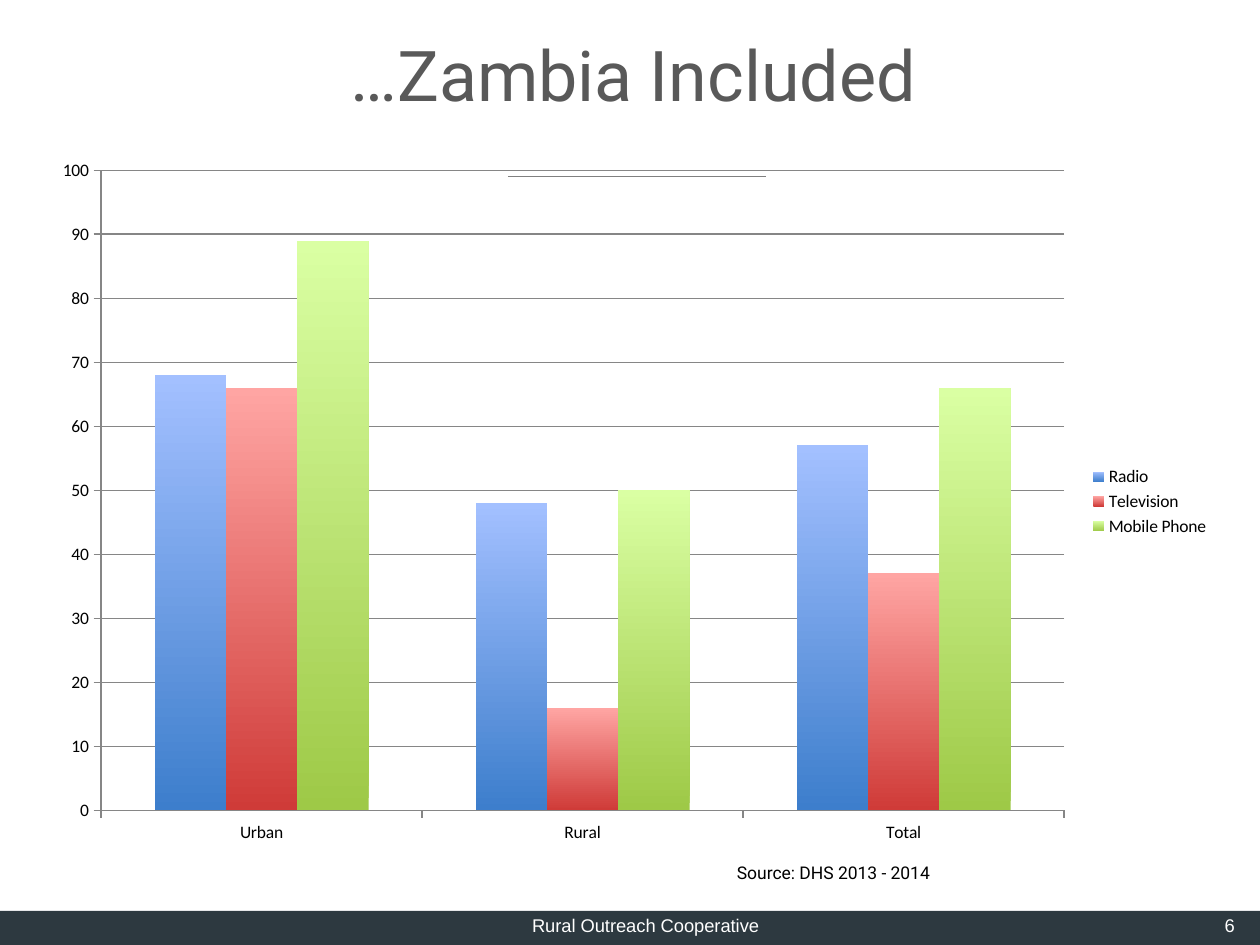
from lxml import etree
from pptx import Presentation
from pptx.chart.data import CategoryChartData
from pptx.dml.color import RGBColor
from pptx.enum.chart import XL_CHART_TYPE, XL_LEGEND_POSITION, XL_TICK_MARK
from pptx.enum.shapes import MSO_CONNECTOR, MSO_SHAPE
from pptx.enum.text import MSO_ANCHOR, PP_ALIGN
from pptx.oxml.ns import qn
from pptx.util import Inches, Pt

WHITE = RGBColor(0xFF, 0xFF, 0xFF)
BLACK = RGBColor(0x00, 0x00, 0x00)
SLATE = RGBColor(0x2D, 0x39, 0x40)
TITLE_GRAY = RGBColor(0x59, 0x59, 0x59)
RULE_GRAY = RGBColor(0x80, 0x80, 0x80)
AXIS_GRAY = RGBColor(0x86, 0x86, 0x86)
BLUE_DARK, BLUE_LIGHT = RGBColor(0x3D, 0x7E, 0xCC), RGBColor(0xA3, 0xC0, 0xFF)
RED_DARK, RED_LIGHT = RGBColor(0xCF, 0x3B, 0x38), RGBColor(0xFF, 0xA5, 0xA3)
GREEN_DARK, GREEN_LIGHT = RGBColor(0x9E, 0xC9, 0x47), RGBColor(0xDA, 0xFF, 0xA3)

CATEGORIES = ("Urban", "Rural", "Total")
SERIES = (
    ("Radio", (68, 48, 57), BLUE_DARK, BLUE_LIGHT),
    ("Television", (66, 16, 37), RED_DARK, RED_LIGHT),
    ("Mobile Phone", (89, 50, 66), GREEN_DARK, GREEN_LIGHT),
)


def style_font(font, name, size, color):
    for key, value in {"name": name, "size": Pt(size), "bold": False}.items():
        setattr(font, key, value)
    font.color.rgb = color


def fill_text(shape, text, align, side_margin, name, size, color):
    frame = shape.text_frame
    settings = {
        "word_wrap": True,
        "vertical_anchor": MSO_ANCHOR.TOP,
        "margin_left": side_margin,
        "margin_right": side_margin,
        "margin_top": Inches(0.05),
        "margin_bottom": Inches(0.05),
    }
    for key, value in settings.items():
        setattr(frame, key, value)
    para = frame.paragraphs[0]
    para.alignment = align
    span = para.add_run()
    span.text = text
    style_font(span.font, name, size, color)


def add_title(page, left, top, width, height):
    title = page.shapes.title
    box = {"left": left, "top": top, "width": width, "height": height}
    for key, value in box.items():
        setattr(title, key, value)
    fill_text(title, "…Zambia Included", PP_ALIGN.CENTER, Inches(0.1),
              "Roboto", 40, TITLE_GRAY)


def add_rule(page, left, top, width):
    rule = page.shapes.add_connector(
        MSO_CONNECTOR.STRAIGHT, left, top, left + width, top)
    rule.line.color.rgb = RULE_GRAY
    rule.line.width = Pt(0.75)
    etree.SubElement(rule._element.spPr, qn("a:effectLst"))


def add_source(page, left, top, width, height):
    box = page.shapes.add_textbox(left, top, width, height)
    fill_text(box, "Source: DHS 2013 - 2014", PP_ALIGN.LEFT, Inches(0.1),
              "Roboto", 10, BLACK)


def add_media_chart(page, left, top, width, height):
    data = CategoryChartData()
    data.categories = CATEGORIES
    for name, values, _, _ in SERIES:
        data.add_series(name, values)
    chart = page.shapes.add_chart(
        XL_CHART_TYPE.COLUMN_CLUSTERED, left, top, width, height, data).chart
    style_font(chart.font, "Calibri", 10, BLACK)
    chart.has_title = False
    chart.has_legend = True
    chart.legend.position = XL_LEGEND_POSITION.RIGHT
    chart.legend.include_in_layout = False

    plot = chart.plots[0]
    for key, value in {"gap_width": 150, "overlap": 0,
                       "vary_by_categories": False}.items():
        setattr(plot, key, value)
    for series, (_, _, dark, light) in zip(plot.series, SERIES):
        fill = series.format.fill
        fill.gradient()
        fill.gradient_angle = 90
        for stop, color in zip(fill.gradient_stops, (dark, light)):
            stop.color.rgb = color

    value_axis = chart.value_axis
    for key, value in {"minimum_scale": 0, "maximum_scale": 100,
                       "major_unit": 10, "has_major_gridlines": True}.items():
        setattr(value_axis, key, value)
    for axis in (chart.category_axis, value_axis):
        axis.major_tick_mark = XL_TICK_MARK.OUTSIDE
        axis.minor_tick_mark = XL_TICK_MARK.NONE
    for part in (chart.category_axis, value_axis, value_axis.major_gridlines):
        part.format.line.color.rgb = AXIS_GRAY
        part.format.line.width = Pt(0.75)


def add_footer(page, left, top, width, height):
    bar = page.shapes.add_shape(MSO_SHAPE.RECTANGLE, left, top, width, height)
    bar.shadow.inherit = False
    bar.fill.solid()
    bar.fill.fore_color.rgb = SLATE
    bar.line.fill.background()
    labels = (
        ("6", PP_ALIGN.RIGHT, Inches(9.08), Inches(0.72)),
        ("Rural Outreach Cooperative", PP_ALIGN.CENTER, Inches(2.5), Inches(5.25)),
    )
    for text, align, offset, label_width in labels:
        label = page.shapes.add_textbox(
            left + offset, top - Inches(0.02), label_width, Inches(0.29))
        fill_text(label, text, align, 0, "Arial", 10.5, WHITE)


def main():
    deck = Presentation()
    deck.slide_width, deck.slide_height = Inches(10), Inches(7.5)
    page = deck.slides.add_slide(deck.slide_layouts[5])
    add_footer(page, 0, Inches(7.23), deck.slide_width, Inches(0.27))
    add_title(page, 0, Inches(0.2), Inches(10.05), Inches(1.16))
    add_rule(page, Inches(4.03), Inches(1.4), Inches(2.05))
    add_source(page, Inches(5.75), Inches(6.79), Inches(4.25), Inches(0.27))
    add_media_chart(page, Inches(0.31), Inches(1.16), Inches(9.39), Inches(5.64))
    deck.save("out.pptx")


if __name__ == "__main__":
    main()
